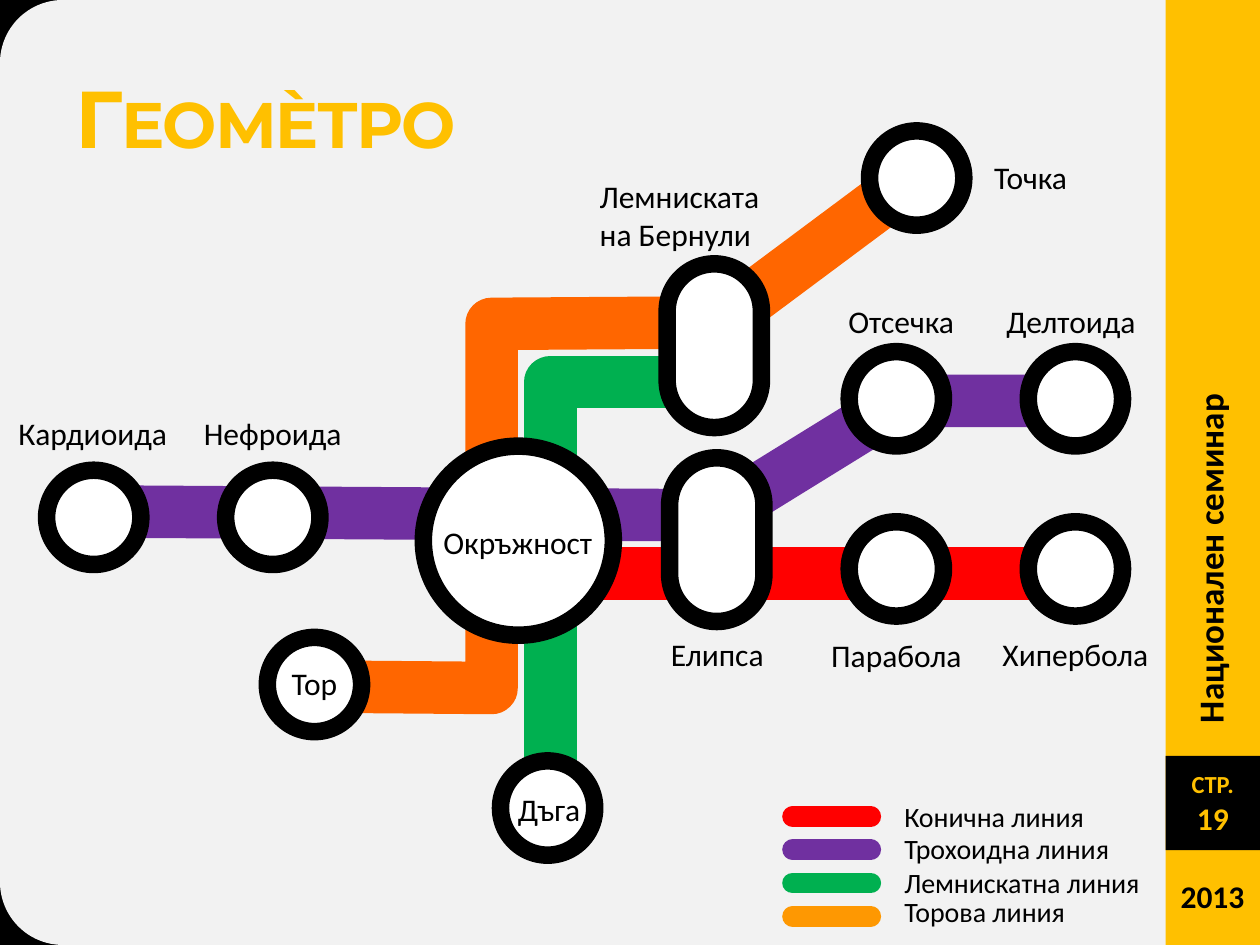
from pptx import Presentation
from pptx.dml.color import RGBColor
from pptx.enum.shapes import MSO_CONNECTOR, MSO_SHAPE
from pptx.enum.text import MSO_ANCHOR, MSO_AUTO_SIZE, PP_ALIGN
from pptx.oxml.ns import qn
from pptx.util import Cm, Pt
from lxml import etree

RECT, OVAL, ROUNDED = MSO_SHAPE.RECTANGLE, MSO_SHAPE.OVAL, MSO_SHAPE.ROUNDED_RECTANGLE
STRAIGHT = MSO_CONNECTOR.STRAIGHT
CENTER, LEFT = PP_ALIGN.CENTER, PP_ALIGN.LEFT
MIDDLE, TOP = MSO_ANCHOR.MIDDLE, MSO_ANCHOR.TOP
GROW = MSO_AUTO_SIZE.SHAPE_TO_FIT_TEXT

BLACK, WHITE, PAPER, GOLD = "000000", "FFFFFF", "F2F2F2", "FFC000"
RED, PURPLE, ORANGE, GREEN, AMBER = "FF0000", "7030A0", "FF6600", "00B050", "FE9802"

STOP = 1.9  # diameter of a plain station
ROUTES = [
    (RED, [(10.44, 11.56), (21.95, 11.56)]),
    (PURPLE, [(1.78, 10.31), (14.45, 10.39), (18.19, 8.08), (21.59, 8.08)]),
    (ORANGE, [(6.3, 13.84), (9.91, 13.87), (9.91, 6.53), (14.5, 6.5), (18.42, 3.58)]),
    (GREEN, [(14.07, 7.7), (11.1, 7.7), (11.1, 16.28)]),
]
# centre x, centre y, width, height
STATIONS = [(x, y, STOP, STOP) for x, y in [
    (1.89, 10.43), (5.5, 10.43), (18.07, 8.04), (21.68, 8.04), (6.34, 13.8),
    (18.48, 3.59), (18.07, 11.47), (21.68, 11.47), (11.04, 16.29)]]
HUBS = [(10.45, 10.9, 3.83, 3.81), (14.4, 6.97, STOP, 3.3), (14.45, 10.88, STOP, 3.3)]
# text, centre x, centre y, width
CENTERED_NAMES = [
    ("Кардиоида", 1.87, 8.74, 3.53), ("Нефроида", 5.5, 8.74, 3.33),
    ("Отсечка", 18.17, 6.48, 2.67), ("Делтоида", 21.59, 6.48, 3.15),
    ("Окръжност", 10.44, 10.92, 3.56), ("Тор", 6.34, 13.77, 1.45),
    ("Дъга", 11.07, 16.31, 1.78), ("Елипса", 14.46, 13.18, 2.41),
    ("Парабола", 18.07, 13.21, 3.18), ("Хипербола", 21.68, 13.18, 3.48),
]
# text, left, top, width, height
LEFT_NAMES = [("Лемниската на Бернули", 11.84, 3.45, 4.47, 1.8),
              ("Точка", 19.79, 3.07, 4.34, 1.02)]
# text, colour, top of the text
LEGEND = [("Конична линия", RED, 0), ("Трохоидна линия", PURPLE, 0.64),
          ("Лемнискатна линия", GREEN, 1.32), ("Торова линия", AMBER, 1.91)]


def color(value):
    return RGBColor.from_string(value)


def lengths(box):
    return [Cm(value) for value in box]


def format_span(span, **changes):
    style = {"name": "Calibri", "size": 18, "bold": False, "color": BLACK, **changes}
    span.font.color.rgb = color(style.pop("color"))
    style["size"] = Pt(style["size"])
    for key, value in style.items():
        setattr(span.font, key, value)


def add_text(page, box, text, align=LEFT, wrap=False, anchor=TOP, size_rule=GROW, **style):
    shape = page.shapes.add_textbox(*lengths(box))
    layout = {"word_wrap": wrap, "auto_size": size_rule, "vertical_anchor": anchor}
    for key, value in layout.items():
        setattr(shape.text_frame, key, value)
    para = shape.text_frame.paragraphs[0]
    para.alignment = align
    span = para.add_run()
    span.text = text
    format_span(span, **style)
    return shape


def add_block(page, kind, box, fill, outline=None):
    shape = page.shapes.add_shape(kind, *lengths(box))
    shape.shadow.inherit = False
    shape.fill.solid()
    shape.fill.fore_color.rgb = color(fill)
    if outline:
        shape.line.color.rgb = color(outline)
        shape.line.width = Pt(10)
    else:
        shape.line.fill.background()
    return shape


def add_route(page, points, stroke, width, cap="flat"):
    """Draw a connector for two points and an open outline for more."""
    points = [tuple(lengths(point)) for point in points]
    if len(points) == 2:
        route = page.shapes.add_connector(STRAIGHT, *points[0], *points[1])
        etree.SubElement(route._element.spPr, qn("a:effectLst"))
    else:
        builder = page.shapes.build_freeform(*points[0])
        builder.add_line_segments(points[1:], close=False)
        route = builder.convert_to_shape()
        route.shadow.inherit = False
        route.fill.background()
    route.line.color.rgb = color(stroke)
    route.line.width = Pt(width)
    outline = route.line._get_or_add_ln()
    outline.set("cap", cap)
    etree.SubElement(outline, qn("a:round"))


def draw_corners(page, box):
    left, top, _, height = box
    radius = 1.27
    bottom = top + height
    for square_top, circle_top in [(top, top), (bottom - radius, bottom - 2 * radius)]:
        add_block(page, RECT, (left, square_top, radius, radius), BLACK)
        add_block(page, OVAL, (left, circle_top, 2 * radius, 2 * radius), PAPER)


def draw_side_bar(page, box):
    left, top, width, _ = box
    add_block(page, RECT, box, GOLD)
    seminar = add_text(page, (left - 2.7, top + 10.67, 7.19, 1.12),
                       "Национален семинар", size=20, bold=True)
    seminar.rotation = 270
    add_text(page, (left + 0.05, top + 17.55, 1.8, 1.02), "2013", bold=True)

    number = add_block(page, RECT, (left, top + 15.24, width, width), BLACK)
    number.text_frame.vertical_anchor = MIDDLE
    para = number.text_frame.paragraphs[0]
    para.alignment = CENTER
    for text, size in [("СТР.", 14), ("19", 18)]:
        if para.runs:
            para.add_line_break()
        span = para.add_run()
        span.text = text
        format_span(span, size=size, bold=True, color=GOLD)


def draw_title(page, box):
    title = add_text(page, box, "Геомèтро", wrap=True, anchor=MIDDLE,
                     size_rule=MSO_AUTO_SIZE.NONE,
                     name="Montserrat", size=46, bold=True, color=GOLD)
    properties = title.text_frame.paragraphs[0].runs[0].font._element
    properties.set("cap", "small")
    properties.set("spc", "-100")


def draw_map(page, box):
    left, top = box[:2]
    for stroke, points in ROUTES:
        add_route(page, [(left + x, top + y) for x, y in points], stroke, 30)
    for kind, places in [(OVAL, STATIONS), (ROUNDED, HUBS)]:
        for x, y, width, height in places:
            place = (left + x - width / 2, top + y - height / 2, width, height)
            station = add_block(page, kind, place, WHITE, BLACK)
            if kind == ROUNDED:
                station.adjustments[0] = 0.5
    for text, x, y, width in CENTERED_NAMES:
        add_text(page, (left + x - width / 2, top + y - 0.51, width, 1.02), text, CENTER)
    for text, x, y, width, height in LEFT_NAMES:
        add_text(page, (left + x, top + y, width, height), text, wrap=True)


def draw_legend(page, box):
    left, top, width, _ = box
    for row, (text, stroke, text_top) in enumerate(LEGEND):
        y = top + 0.46 + 0.67 * row
        add_route(page, [(left, y), (left + 1.57, y)], stroke, 12, cap="rnd")
        add_text(page, (left + 2, top + text_top, width - 2, 0.94), text, wrap=True, size=16)


def main():
    deck = Presentation()
    deck.slide_width, deck.slide_height = Cm(25.4), Cm(19.05)
    page = deck.slides.add_slide(deck.slide_layouts[6])
    page.background.fill.solid()
    page.background.fill.fore_color.rgb = color(PAPER)
    draw_corners(page, (0, 0, 23.5, 19.05))
    draw_side_bar(page, (23.5, 0, 1.9, 19.05))
    draw_title(page, (1.27, 0.76, 21.16, 3.18))
    draw_map(page, (0, 0, 23.5, 19.05))
    draw_legend(page, (15.98, 16, 7.44, 2.85))
    deck.save("out.pptx")


if __name__ == "__main__":
    main()
